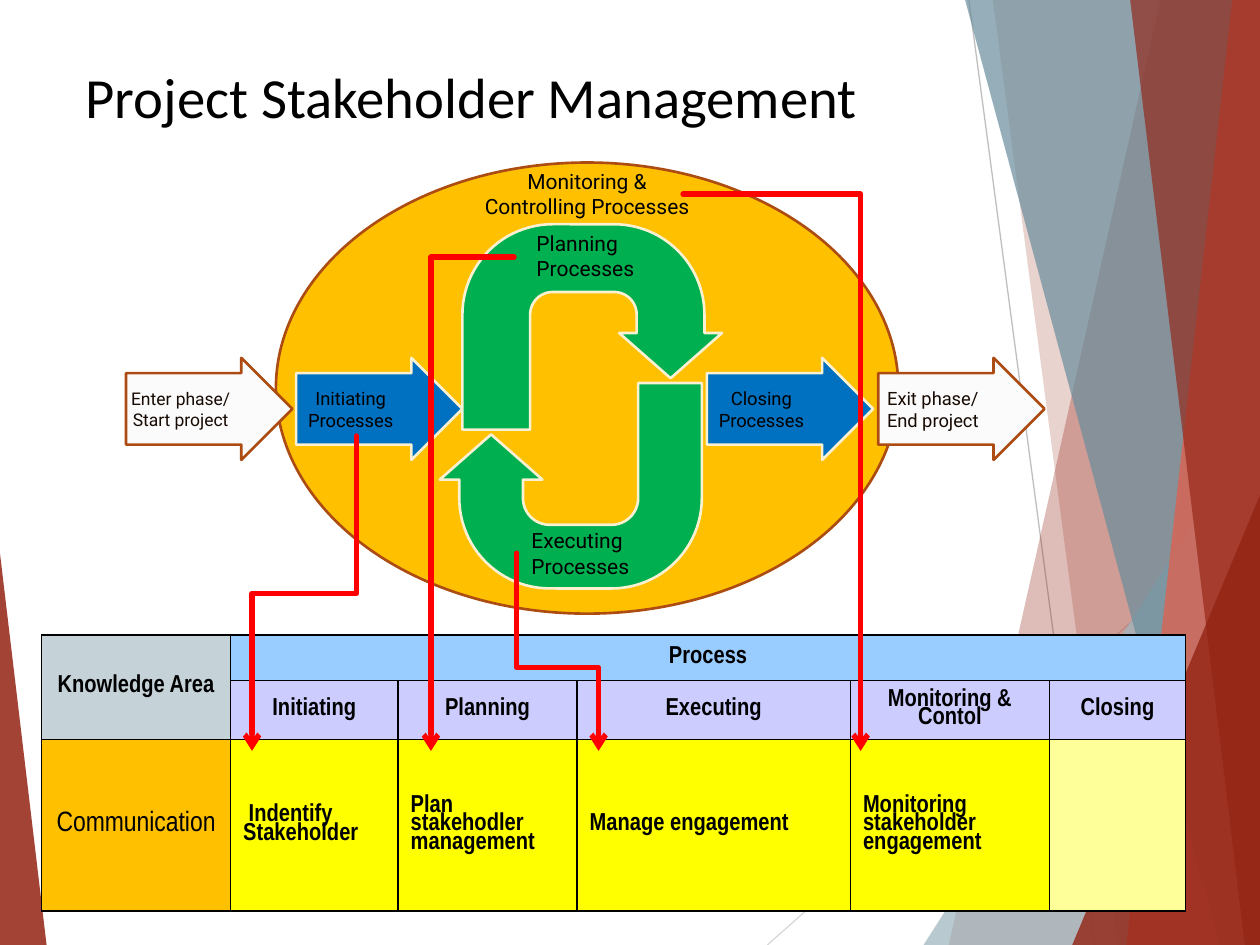
import pptx
import pptx.util
import pptx.dml.color
import pptx.enum.shapes
import pptx.enum.text
import pptx.oxml
import pptx.oxml.ns
from lxml import etree

Inches = pptx.util.Inches
Pt = pptx.util.Pt
RGBColor = pptx.dml.color.RGBColor
SHAPE = pptx.enum.shapes.MSO_SHAPE
CONNECTOR = pptx.enum.shapes.MSO_CONNECTOR
ALIGN = pptx.enum.text.PP_ALIGN
ANCHOR = pptx.enum.text.MSO_ANCHOR
qn = pptx.oxml.ns.qn

BLACK = RGBColor(0x00, 0x00, 0x00)
DARK_BROWN = RGBColor(0x17, 0x0A, 0x02)
BROWN = RGBColor(0xAD, 0x4C, 0x12)
CREAM = RGBColor(0xFA, 0xF1, 0xD2)
OFF_WHITE = RGBColor(0xFB, 0xFB, 0xFB)
AMBER = RGBColor(0xFF, 0xC0, 0x00)
BLUE = RGBColor(0x00, 0x70, 0xC0)
GREEN = RGBColor(0x00, 0xB0, 0x50)
RED = RGBColor(0xFF, 0x00, 0x00)
YELLOW = RGBColor(0xFF, 0xFF, 0x00)
PALE_YELLOW = RGBColor(0xFF, 0xFF, 0x99)
SKY = RGBColor(0x99, 0xCC, 0xFF)
LAVENDER = RGBColor(0xCC, 0xCC, 0xFF)
BLUE_GREY = RGBColor(0xC5, 0xD3, 0xD9)
MAROON = RGBColor(0x93, 0x23, 0x13)
CORAL = RGBColor(0xE7, 0x5C, 0x48)
STEEL = RGBColor(0x69, 0x8D, 0x9C)
LIGHT_STEEL = RGBColor(0x9E, 0xB5, 0xBF)
GREY = RGBColor(0xBF, 0xBF, 0xBF)
LIGHT_GREY = RGBColor(0xD9, 0xD9, 0xD9)


def add_run(paragraph, text, size, font, color, bold=False):
    run = paragraph.add_run()
    run.text = text
    run.font.size = Pt(size)
    run.font.name = font
    run.font.bold = bold
    run.font.color.rgb = color


def write_lines(frame, lines, size, color, align):
    for number, line in enumerate(lines):
        paragraph = frame.add_paragraph() if number else frame.paragraphs[0]
        paragraph.alignment = align
        add_run(paragraph, line, size, "Roboto", color)


def paint(shape, fill, line=None, opacity=100):
    shape.shadow.inherit = False
    shape.fill.solid()
    shape.fill.fore_color.rgb = fill
    if opacity < 100:
        color = shape._element.spPr.find(qn("a:solidFill"))[0]
        etree.SubElement(color, qn("a:alpha"), val=str(opacity * 1000))
    if line is None:
        shape.line.fill.background()
    else:
        shape.line.color.rgb = line
        shape.line.width = Pt(1.5)


def add_preset(slide, preset, box, fill, line=None, adjustments=(), opacity=100):
    shape = slide.shapes.add_shape(preset, *map(Inches, box))
    for number, value in enumerate(adjustments):
        shape.adjustments[number] = value
    paint(shape, fill, line, opacity)
    return shape


def add_ray(slide, top_left, bottom_left, fill, opacity):
    """Band from a slanted left edge to the right side of the slide."""
    builder = slide.shapes.build_freeform(Inches(top_left), 0)
    builder.add_line_segments(
        [(Inches(x), Inches(y)) for x, y in ((10, 0), (10, 7.5), (bottom_left, 7.5))])
    paint(builder.convert_to_shape(), fill, opacity=opacity)


def add_line(slide, kind, begin, end, color, width):
    line = slide.shapes.add_connector(kind, *map(Inches, (*begin, *end)))
    line.line.color.rgb = color
    line.line.width = Pt(width)
    etree.SubElement(line._element.spPr, qn("a:effectLst"))
    return line


def add_process_link(slide, begin, end, bend):
    """Arrow that runs down, sideways, then down; bend is the share of the first drop."""
    (x1, y1), (x2, y2) = begin, end
    center_x, center_y = (x1 + x2) / 2, (y1 + y2) / 2
    half_length, half_width = (y2 - y1) / 2, abs(x2 - x1) / 2
    link = add_line(slide, CONNECTOR.ELBOW,
                    (center_x - half_length, center_y - half_width),
                    (center_x + half_length, center_y + half_width), RED, 3)
    properties = link._element.spPr
    frame = properties.find(qn("a:xfrm"))
    if x2 < x1:
        frame.set("rot", "5400000")
    else:
        frame.set("rot", "16200000")
        frame.set("flipH", "1")
    guides = properties.find(qn("a:prstGeom")).find(qn("a:avLst"))
    etree.SubElement(guides, qn("a:gd"), name="adj1", fmla=f"val {round(bend * 100000)}")
    outline = properties.find(qn("a:ln"))
    outline.set("cap", "rnd")
    etree.SubElement(outline, qn("a:tailEnd"), type="arrow")


def add_phase_arrow(slide, left, lines, fill, line, color, size=10.5):
    arrow = add_preset(slide, SHAPE.RIGHT_ARROW, (left, 2.84, 1.32, 0.81),
                       fill, line, (0.7, 0.5))
    frame = arrow.text_frame
    frame.margin_left, frame.margin_right = 0, Inches(0.17)
    frame.margin_top = frame.margin_bottom = 0
    frame.vertical_anchor = ANCHOR.MIDDLE
    write_lines(frame, lines, size, color, ALIGN.CENTER)


def add_label(slide, box, lines, align=ALIGN.LEFT):
    frame = slide.shapes.add_textbox(*map(Inches, box)).text_frame
    frame.word_wrap = True
    write_lines(frame, lines, 12, BLACK, align)


def fill_cell(cell, text, fill, align=ALIGN.CENTER, size=14, bold=True):
    cell.fill.solid()
    cell.fill.fore_color.rgb = fill
    cell.vertical_anchor = ANCHOR.MIDDLE
    if text:
        paragraph = cell.text_frame.paragraphs[0]
        paragraph.alignment = align
        paragraph.line_spacing = 0.8
        add_run(paragraph, text, size, "Arial Narrow", BLACK, bold)


def add_borders(cell):
    properties = cell._tc.get_or_add_tcPr()
    for position, side in enumerate(("a:lnL", "a:lnR", "a:lnT", "a:lnB")):
        border = etree.Element(qn(side), w=str(Pt(1)))
        solid = etree.SubElement(border, qn("a:solidFill"))
        etree.SubElement(solid, qn("a:srgbClr"), val=str(BLACK))
        properties.insert(position, border)


def add_process_table(slide):
    widths, heights = (1.5, 1.33, 1.42, 2.17, 1.58, 1.08), (0.36, 0.47, 1.36)
    table = slide.shapes.add_table(
        3, 6, Inches(0.33), Inches(5.04), Inches(sum(widths)), Inches(sum(heights))).table
    for column, width in zip(table.columns, widths):
        column.width = Inches(width)
    for row, height in zip(table.rows, heights):
        row.height = Inches(height)
    table.cell(0, 0).merge(table.cell(1, 0))
    table.cell(0, 1).merge(table.cell(0, 5))
    fill_cell(table.cell(0, 0), "Knowledge Area", BLUE_GREY)
    fill_cell(table.cell(0, 1), "Process", SKY)
    fill_cell(table.cell(2, 0), "Communication", AMBER, size=16, bold=False)
    processes = (("Initiating", " Indentify Stakeholder"),
                 ("Planning", "Plan stakehodler management"),
                 ("Executing", "Manage engagement"),
                 ("Monitoring & Contol", "Monitoring stakeholder engagement"),
                 ("Closing", ""))
    for column, (process, activity) in enumerate(processes, 1):
        fill_cell(table.cell(1, column), process, LAVENDER)
        fill_cell(table.cell(2, column), activity,
                  YELLOW if activity else PALE_YELLOW, ALIGN.LEFT)
    for cell in table.iter_cells():
        add_borders(cell)


def add_backdrop(slide):
    add_line(slide, CONNECTOR.STRAIGHT, (7.69, 0), (8.69, 7.5), GREY, 0.75)
    add_line(slide, CONNECTOR.STRAIGHT, (10, 4.03), (6.09, 7.5), LIGHT_GREY, 0.75)
    add_ray(slide, 9.21, 7.53, MAROON, 30)
    add_ray(slide, 7.88, 8.87, MAROON, 20)
    triangle = SHAPE.ISOSCELES_TRIANGLE
    add_preset(slide, triangle, (7.33, 3.33, 2.67, 4.17), LIGHT_STEEL, None, [1], 72)
    add_ray(slide, 7.66, 9.68, STEEL, 70)
    add_ray(slide, 9.78, 8.94, CORAL, 70)
    add_ray(slide, 8.97, 9.88, MAROON, 65)
    add_preset(slide, triangle, (8.51, 3.93, 1.49, 3.57), MAROON, None, [1], 80)
    add_preset(slide, triangle, (0, 4.39, 0.37, 3.11), MAROON, None, [0], 85)


def add_title(slide, text):
    title = slide.shapes.title
    title.left, title.top, title.width, title.height = map(Inches, (0.58, 0.42, 8.33, 0.5))
    frame = title.text_frame
    frame.vertical_anchor = ANCHOR.TOP
    frame.margin_top = Inches(0.07)
    frame.paragraphs[0].alignment = ALIGN.LEFT
    add_run(frame.paragraphs[0], text, 32.4, "Calibri", BLACK)


def add_process_cycle(slide):
    add_preset(slide, SHAPE.OVAL, (2.19, 1.29, 4.94, 3.58), AMBER, BROWN)
    add_phase_arrow(slide, 1, ("Enter phase/", "Start project"),
                    OFF_WHITE, BROWN, DARK_BROWN, 10)
    add_phase_arrow(slide, 6.97, ("Exit phase/", "End project"), OFF_WHITE, BROWN, DARK_BROWN)
    add_phase_arrow(slide, 2.35, ("Initiating", "Processes"), BLUE, CREAM, BLACK)
    add_phase_arrow(slide, 5.61, ("Closing", "Processes"), BLUE, CREAM, BLACK)
    bend = (0.25, 0.22, 0.44, 0.75)
    add_preset(slide, SHAPE.U_TURN_ARROW, (3.67, 1.78, 2.06, 1.63), GREEN, CREAM, (0.33, *bend))
    executing = add_preset(slide, SHAPE.U_TURN_ARROW, (3.49, 3.04, 2.08, 1.63),
                           GREEN, CREAM, (0.31, *bend))
    executing.rotation = 180
    add_label(slide, (4.16, 1.78, 1.07, 0.49), ("Planning", "Processes"))
    add_label(slide, (4.12, 4.14, 1.07, 0.49), ("Executing", "Processes"))
    add_label(slide, (3.67, 1.29, 1.98, 0.5), ("Monitoring &", "Controlling Processes"),
              ALIGN.CENTER)


def main():
    deck = pptx.Presentation()
    deck.slide_width, deck.slide_height = Inches(10), Inches(7.5)
    slide = deck.slides.add_slide(deck.slide_layouts[5])
    add_backdrop(slide)
    add_title(slide, "Project Stakeholder Management")
    add_process_table(slide)
    add_process_cycle(slide)
    for begin, end_x, bend in (((4.08, 2.04), 3.42, 0), ((5.42, 1.54), 6.83, 0),
                               ((4.1, 4.39), 4.75, 0.58), ((2.83, 3.46), 2, 0.5)):
        add_process_link(slide, begin, (end_x, 5.96), bend)
    deck.save("out.pptx")


if __name__ == "__main__":
    main()
